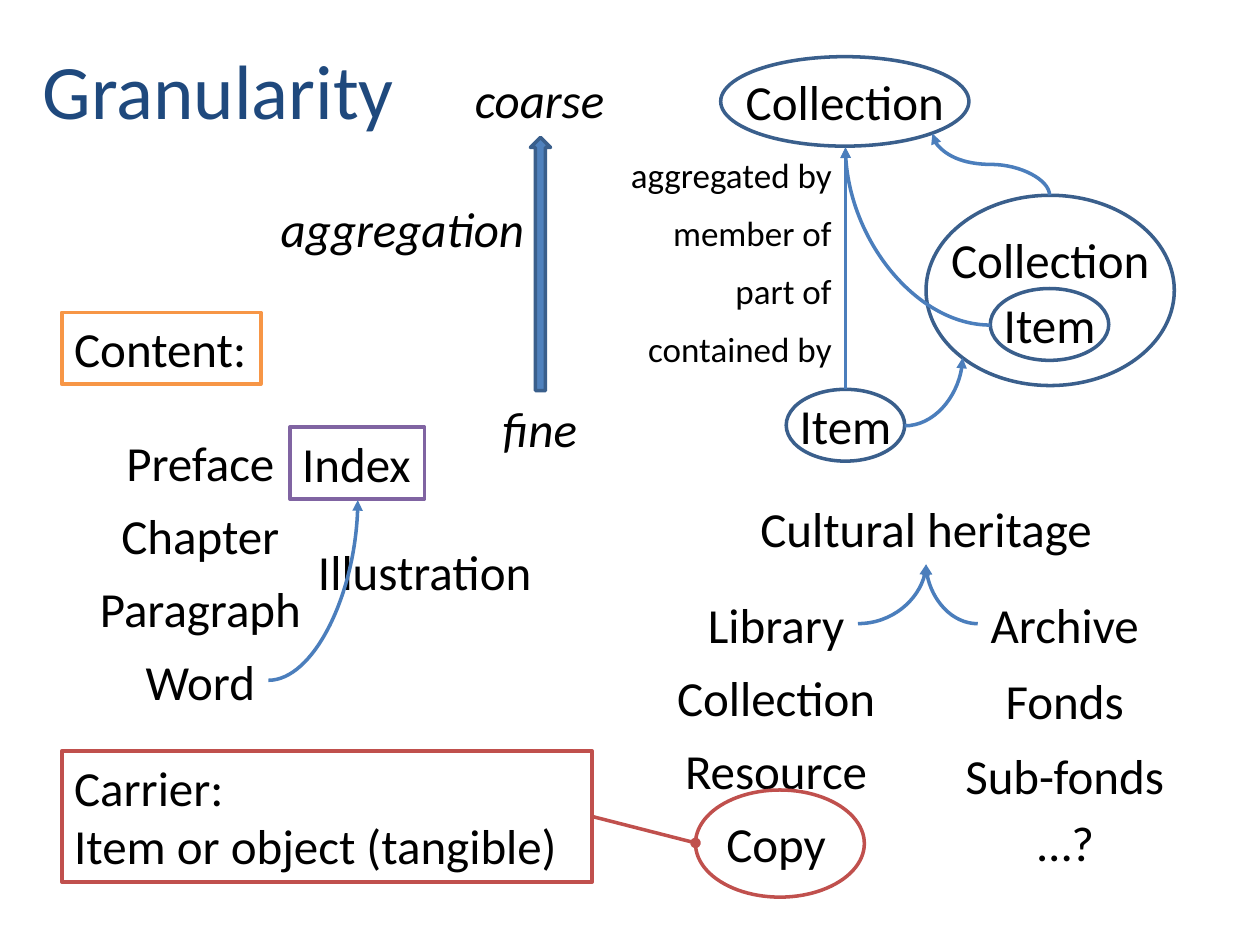
from dataclasses import dataclass

from lxml import etree
from pptx import Presentation
from pptx.dml.color import RGBColor
from pptx.enum.shapes import MSO_CONNECTOR, MSO_SHAPE
from pptx.enum.text import MSO_ANCHOR, MSO_AUTO_SIZE, PP_ALIGN
from pptx.oxml.ns import qn
from pptx.util import Inches, Pt

ELLIPSE, RECTANGLE, UP_ARROW = MSO_SHAPE.OVAL, MSO_SHAPE.RECTANGLE, MSO_SHAPE.UP_ARROW
STRAIGHT, CURVE = MSO_CONNECTOR.STRAIGHT, MSO_CONNECTOR.CURVE
LEFT, CENTER, RIGHT = PP_ALIGN.LEFT, PP_ALIGN.CENTER, PP_ALIGN.RIGHT
TOP, NO_FIT = MSO_ANCHOR.TOP, MSO_AUTO_SIZE.NONE

COLORS = {
    "title": "1F497D",
    "text": "000000",
    "outline": "3A5F8C",
    "link": "4B7EBC",
    "arrow": "4F81BD",
    "carrier": "C0504D",
    "content": "F79646",
    "index": "8064A2",
}
FONT = "Calibri"
LINE_HEIGHT = 0.57
ALIGN_SHARE = {LEFT: 0, CENTER: 0.5, RIGHT: 1}


@dataclass
class Box:
    left: float
    top: float
    width: float
    height: float


@dataclass
class Label:
    text: str
    width: float


@dataclass
class Column:
    anchor: float
    top: float
    step: float
    labels: list[Label]
    align: PP_ALIGN = CENTER
    size: int = 28
    height: float = LINE_HEIGHT


@dataclass
class Node:
    oval: Box
    label: Label
    label_top: float


@dataclass
class Link:
    begin: tuple[float, float]
    end: tuple[float, float]
    preset: str = "curvedConnector2"
    rotation: int = 0


COLLECTION, ITEM = Label("Collection", 1.79), Label("Item", 0.94)

NODES = [
    Node(Box(7.35, 1.55, 1.97, 1.51), COLLECTION, 1.77),
    Node(Box(7.86, 2.29, 0.94, 0.57), ITEM, 2.29),
    Node(Box(6.24, 3.09, 0.94, 0.57), ITEM, 3.09),
    Node(Box(5.72, 0.45, 1.97, 0.71), COLLECTION, 0.52),
]

COLUMNS = [
    Column(6.7, 1.17, 0.46, [
        Label("aggregated by", 1.81), Label("member of", 1.47),
        Label("part of", 0.97), Label("contained by", 1.67),
    ], RIGHT, 20, 0.44),
    Column(6.16, 4.67, 0.58, [
        Label("Library", 1.29), COLLECTION, Label("Resource", 1.66), Label("Copy", 1.0),
    ]),
    Column(8.45, 4.67, 0.6, [
        Label("Archive", 1.39), Label("Fonds", 1.15), Label("Sub-fonds", 1.8),
    ]),
    Column(8.46, 6.4, 0, [Label("…?", 0.66)]),
    Column(7.35, 3.91, 0, [Label("Cultural heritage", 2.86)]),
    Column(1.59, 3.38, 0.58, [
        Label("Preface", 1.39), Label("Chapter", 1.47),
        Label("Paragraph", 1.81), Label("Word", 1.08),
    ]),
    Column(3.37, 4.25, 0, [Label("Illustration", 1.91)]),
]

LINKS = [
    Link((7.18, 3.38), (7.64, 2.84)),
    Link((6.71, 1.17), (7.86, 2.58), rotation=180),
    Link((7.62, 1.77), (8.11, 0.84), "curvedConnector3", 270),
    Link((6.81, 4.95), (7.35, 4.48)),
    Link((7.35, 4.48), (7.76, 4.95), rotation=180),
    Link((2.13, 5.4), (2.84, 3.97)),
]


def frame(box: Box) -> list:
    return [Inches(value) for value in (box.left, box.top, box.width, box.height)]


def write_text(shape, text: str, *, size: int = 28, color: str = "text",
               italic: bool = False, align: PP_ALIGN = LEFT, wrap: bool = False) -> None:
    text_frame = shape.text_frame
    text_frame.word_wrap = wrap
    text_frame.auto_size = NO_FIT
    text_frame.vertical_anchor = TOP
    text_frame.text = text
    for paragraph in text_frame.paragraphs:
        paragraph.alignment = align
        font = paragraph.font
        font.name, font.size, font.italic = FONT, Pt(size), italic
        font.color.rgb = RGBColor.from_string(COLORS[color])


def add_text(slide, box: Box, text: str, **text_format) -> None:
    write_text(slide.shapes.add_textbox(*frame(box)), text, **text_format)


def add_outline(slide, kind: MSO_SHAPE, box: Box, line: str, fill: str = ""):
    shape = slide.shapes.add_shape(kind, *frame(box))
    shape.shadow.inherit = False
    shape.line.color.rgb = RGBColor.from_string(COLORS[line])
    shape.line.width = Pt(2)
    if fill:
        shape.fill.solid()
        shape.fill.fore_color.rgb = RGBColor.from_string(COLORS[fill])
    else:
        shape.fill.background()
    return shape


def add_link(slide, link: Link, color: str = "link", tail: str = "triangle"):
    kind = STRAIGHT if link.preset == "line" else CURVE
    points = [Inches(value) for value in (*link.begin, *link.end)]
    connector = slide.shapes.add_connector(kind, *points)
    connector.line.color.rgb = RGBColor.from_string(COLORS[color])
    connector.line.width = Pt(2)
    properties = connector._element.spPr
    properties.find(qn("a:prstGeom")).set("prst", link.preset)
    if link.rotation:
        properties.find(qn("a:xfrm")).set("rot", str(link.rotation * 60000))
    etree.SubElement(properties.find(qn("a:ln")), qn("a:tailEnd"), type=tail)
    etree.SubElement(properties, qn("a:effectLst"))
    return connector


def add_node(slide, node: Node) -> None:
    add_outline(slide, ELLIPSE, node.oval, "outline")
    left = node.oval.left + (node.oval.width - node.label.width) / 2
    box = Box(left, node.label_top, node.label.width, LINE_HEIGHT)
    add_text(slide, box, node.label.text, align=CENTER)


def add_column(slide, column: Column) -> None:
    for row, label in enumerate(column.labels):
        left = column.anchor - label.width * ALIGN_SHARE[column.align]
        box = Box(left, column.top + row * column.step, label.width, column.height)
        add_text(slide, box, label.text, size=column.size, align=column.align)


def main() -> None:
    presentation = Presentation()
    presentation.slide_width, presentation.slide_height = Inches(10), Inches(7.5)
    slide = presentation.slides.add_slide(presentation.slide_layouts[6])

    add_text(slide, Box(0.24, 0.29, 3.02, 0.84), "Granularity", size=44, color="title")
    for node in NODES:
        add_node(slide, node)
    add_outline(slide, UP_ARROW, Box(4.21, 1.09, 0.16, 2.01), "outline", "arrow")
    add_text(slide, Box(3.67, 0.5, 1.24, LINE_HEIGHT), "coarse", italic=True)
    add_text(slide, Box(3.89, 3.11, 0.81, LINE_HEIGHT), "fine", italic=True)
    add_text(slide, Box(2.13, 1.53, 2.16, LINE_HEIGHT), "aggregation", italic=True)
    for column in COLUMNS:
        add_column(slide, column)

    carrier = add_outline(slide, RECTANGLE, Box(0.49, 5.96, 4.21, 1.04), "carrier")
    write_text(carrier, "Carrier:\nItem or object (tangible)", wrap=True)
    content = add_outline(slide, RECTANGLE, Box(0.49, 2.48, 1.58, LINE_HEIGHT), "content")
    write_text(content, "Content:")
    index = add_outline(slide, RECTANGLE, Box(2.3, 3.39, 1.07, LINE_HEIGHT), "index")
    write_text(index, "Index")
    add_outline(slide, ELLIPSE, Box(5.52, 6.27, 1.34, 0.85), "carrier")

    for link in LINKS:
        add_link(slide, link)
    add_link(slide, Link((6.71, 3.09), (6.71, 1.17), "line"))
    carrier_link = add_link(slide, Link((4.7, 6.48), (5.52, 6.69), "line"), "carrier", "oval")
    carrier_link.begin_connect(carrier, 3)
    presentation.save("out.pptx")


if __name__ == "__main__":
    main()
